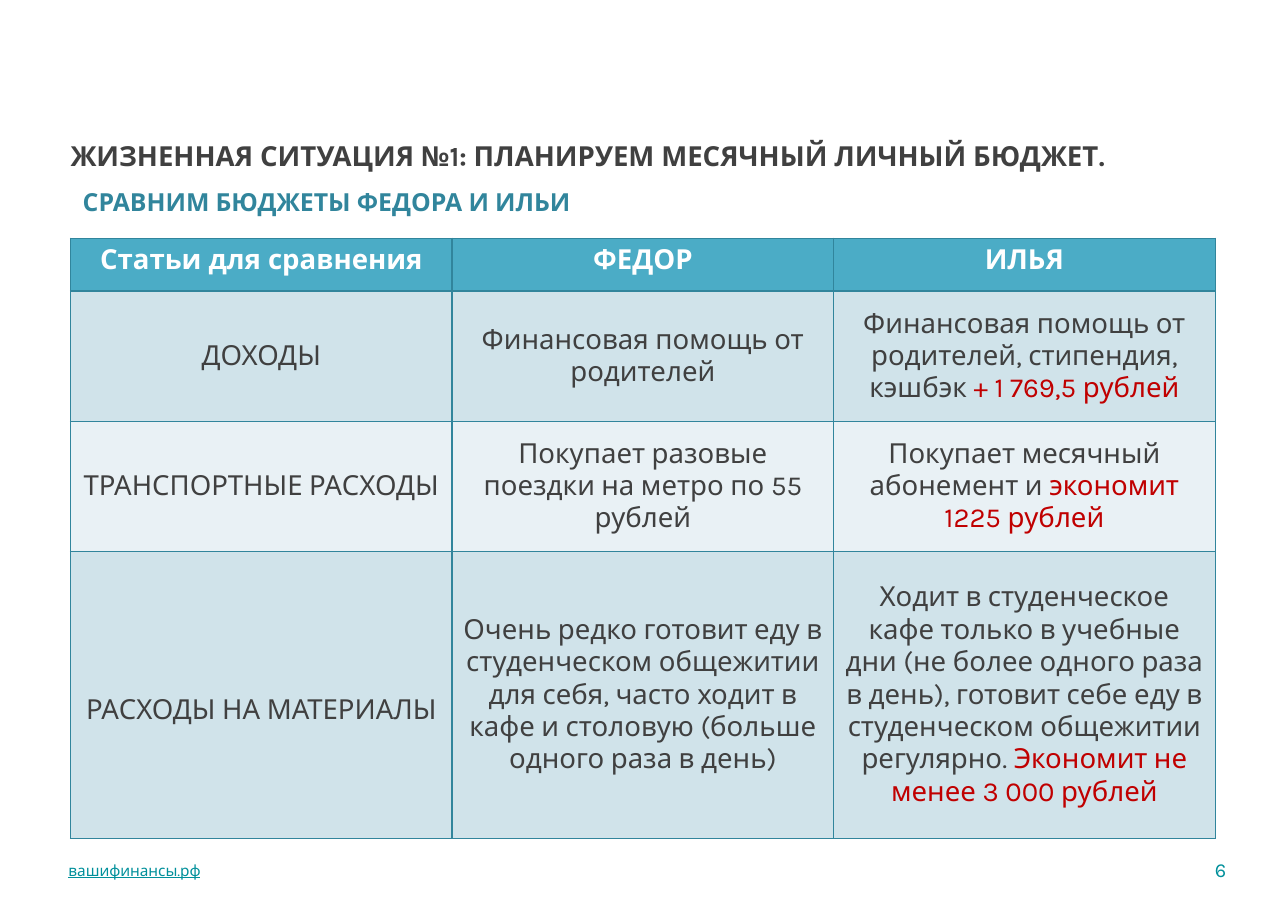
"""Build a slide comparing two students' monthly budgets."""
import pptx
import pptx.dml.color
import pptx.enum.text
import pptx.oxml
import pptx.oxml.ns
import pptx.util

Inches = pptx.util.Inches
Pt = pptx.util.Pt
RGBColor = pptx.dml.color.RGBColor
PP_ALIGN = pptx.enum.text.PP_ALIGN
MSO_ANCHOR = pptx.enum.text.MSO_ANCHOR
MSO_AUTO_SIZE = pptx.enum.text.MSO_AUTO_SIZE

FONT = "Karla"
DARK = RGBColor(0x40, 0x40, 0x40)
TEAL = RGBColor(0x31, 0x85, 0x9C)
FOOTER = RGBColor(0x00, 0x90, 0x9B)
RED = RGBColor(0xC0, 0x00, 0x00)
WHITE = RGBColor(0xFF, 0xFF, 0xFF)
HEADER_FILL = RGBColor(0x4B, 0xAC, 0xC6)
BAND_FILLS = (RGBColor(0xE9, 0xF1, 0xF5), RGBColor(0xD0, 0xE3, 0xEA))

COLUMN_WIDTH = 3.46
ROW_HEIGHTS = (0.48, 1.18, 1.18, 2.6)
HEADERS = ("Статьи для сравнения", "ФЕДОР", "ИЛЬЯ")
# Each cell is a list of paragraphs; each paragraph is a list of (text, color) runs.
ROWS = (
    (
        [[("ДОХОДЫ", DARK)]],
        [[("Финансовая помощь от родителей", DARK)]],
        [[("Финансовая помощь от родителей, стипендия, кэшбэк ", DARK),
          ("+ 1 769,5 рублей", RED)]],
    ),
    (
        [[("ТРАНСПОРТНЫЕ РАСХОДЫ", DARK)]],
        [[("Покупает разовые поездки на метро по 55 рублей", DARK)]],
        [[("Покупает месячный абонемент и ", DARK), ("экономит", RED)],
         [("1225 рублей", RED)]],
    ),
    (
        [[("РАСХОДЫ НА МАТЕРИАЛЫ", DARK)]],
        [[("Очень редко готовит еду в студенческом общежитии для себя, "
           "часто ходит в кафе и столовую (больше одного раза в день)", DARK)]],
        [[("Ходит в студенческое кафе только в учебные дни (не более одного раза "
           "в день), готовит себе еду в студенческом общежитии регулярно. ", DARK),
          ("Экономит не менее 3 000 рублей", RED)]],
    ),
)


def add_run(p, text, size, color, bold=False):
    """Add one formatted run to a paragraph."""
    r = p.add_run()
    r.text = text
    r.font.name = FONT
    r.font.size = Pt(size)
    r.font.bold = bold
    r.font.color.rgb = color
    return r


def add_text_box(s, left, top, width, height, wrap=True):
    """Add an empty text box with narrow margins and return its frame."""
    tf = s.shapes.add_textbox(
        Inches(left), Inches(top), Inches(width), Inches(height)).text_frame
    tf.word_wrap = wrap
    tf.margin_left = tf.margin_right = Inches(0.05)
    tf.margin_top = tf.margin_bottom = Inches(0.05)
    return tf


def add_title(s):
    """Add the heading and its indented second line."""
    tf = add_text_box(s, 0.59, 1.06, 10.52, 0.87)
    p = tf.paragraphs[0]
    p.line_spacing = 1.5
    add_run(p, "ЖИЗНЕННАЯ СИТУАЦИЯ №1: ПЛАНИРУЕМ МЕСЯЧНЫЙ ЛИЧНЫЙ БЮДЖЕТ.",
            18, DARK, True)
    p = tf.add_paragraph()
    p.line_spacing = 1.5
    p._p.get_or_add_pPr().set("marL", str(Inches(0.11)))
    add_run(p, "СРАВНИМ БЮДЖЕТЫ ФЕДОРА И ИЛЬИ", 16.2, TEAL, True)


def add_footer(s):
    """Add the web address and the page number."""
    tf = add_text_box(s, 0.57, 7.75, 3.97, 0.28)
    tf.vertical_anchor = MSO_ANCHOR.MIDDLE
    add_run(tf.paragraphs[0], "вашифинансы.рф", 10, FOOTER).font.underline = True
    tf = add_text_box(s, 10.95, 7.72, 0.22, 0.33, wrap=False)
    tf.vertical_anchor = MSO_ANCHOR.MIDDLE
    tf.auto_size = MSO_AUTO_SIZE.SHAPE_TO_FIT_TEXT
    tf.paragraphs[0].alignment = PP_ALIGN.RIGHT
    add_run(tf.paragraphs[0], "6", 13, FOOTER)


def set_borders(cell):
    """Draw a thin line on all four sides of a cell."""
    for side in ("lnL", "lnR", "lnT", "lnB"):
        cell._tc.get_or_add_tcPr().append(pptx.oxml.parse_xml(
            f'<a:{side} {pptx.oxml.ns.nsdecls("a")} w="{Pt(1)}"><a:solidFill>'
            f'<a:srgbClr val="{TEAL}"/></a:solidFill></a:{side}>'))


def fill_cell(cell, paragraphs, fill, anchor, bold=False):
    """Set the borders, fill and centred text of a cell."""
    set_borders(cell)
    cell.fill.solid()
    cell.fill.fore_color.rgb = fill
    cell.vertical_anchor = anchor
    tf = cell.text_frame
    for i, runs in enumerate(paragraphs):
        p = tf.add_paragraph() if i else tf.paragraphs[0]
        p.alignment = PP_ALIGN.CENTER
        for text, color in runs:
            add_run(p, text, 18, color, bold)


def add_budget_table(s):
    """Add the table comparing both budgets."""
    table = s.shapes.add_table(
        len(ROW_HEIGHTS), len(HEADERS), Inches(0.64), Inches(2.16),
        Inches(COLUMN_WIDTH * len(HEADERS)), Inches(sum(ROW_HEIGHTS))).table
    for column in table.columns:
        column.width = Inches(COLUMN_WIDTH)
    for row, height in zip(table.rows, ROW_HEIGHTS):
        row.height = Inches(height)
    for j, header in enumerate(HEADERS):
        fill_cell(table.cell(0, j), [[(header, WHITE)]], HEADER_FILL,
                  MSO_ANCHOR.TOP, True)
    for i, row in enumerate(ROWS, 1):
        for j, paragraphs in enumerate(row):
            fill_cell(table.cell(i, j), paragraphs, BAND_FILLS[i % 2],
                      MSO_ANCHOR.MIDDLE)
    table.cell(len(ROWS), 0).margin_top = Inches(0.33)


def main():
    """Build and save the slide."""
    prs = pptx.Presentation()
    prs.slide_width = Inches(11.68)
    prs.slide_height = Inches(8.26)
    s = prs.slides.add_slide(prs.slide_layouts[6])
    add_title(s)
    add_budget_table(s)
    add_footer(s)
    prs.save("out.pptx")


if __name__ == "__main__":
    main()
